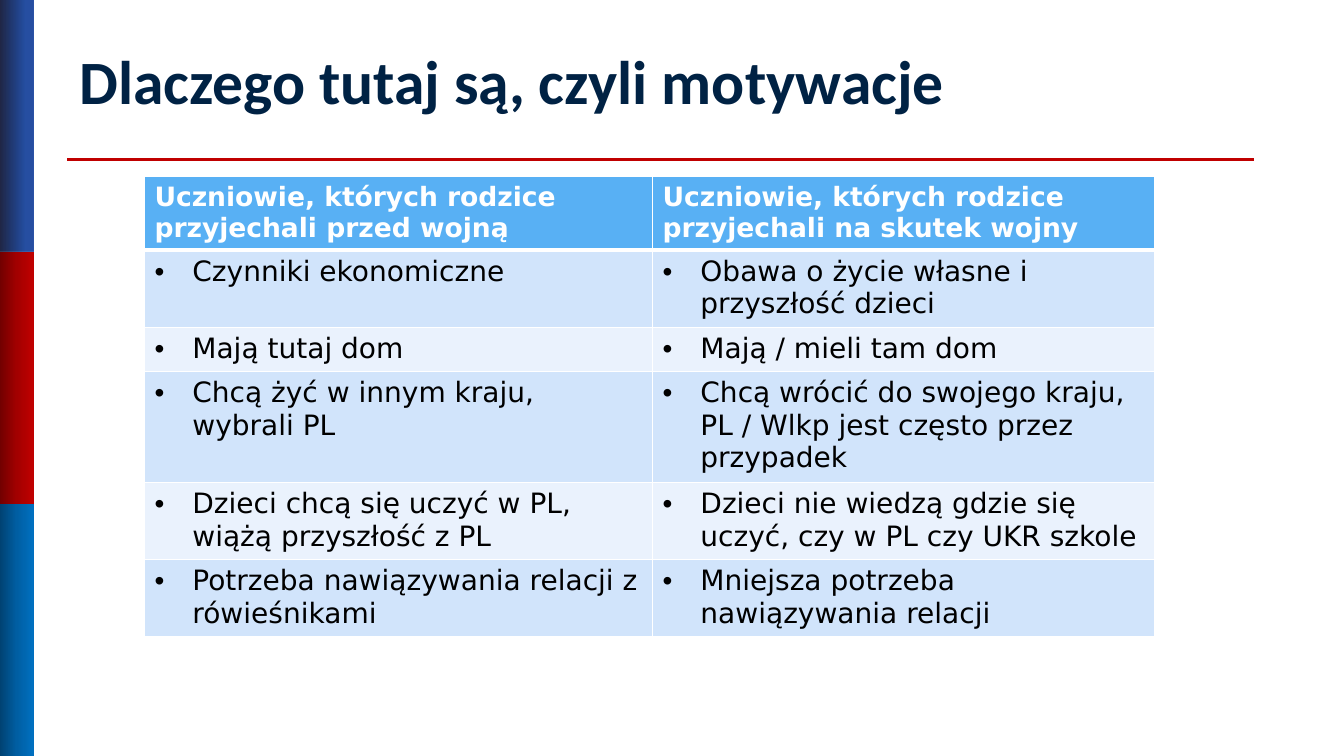
from lxml.etree import SubElement
from pptx import Presentation
from pptx.dml.color import RGBColor
from pptx.enum.shapes import MSO_CONNECTOR, MSO_SHAPE
from pptx.enum.text import MSO_ANCHOR
from pptx.oxml.ns import qn
from pptx.util import Pt

# Content
TITLE = "Dlaczego tutaj są, czyli motywacje"
ROWS = [
    ("Uczniowie, których rodzice przyjechali przed wojną",
     "Uczniowie, których rodzice przyjechali na skutek wojny"),
    ("Czynniki ekonomiczne", "Obawa o życie własne i przyszłość dzieci"),
    ("Mają tutaj dom", "Mają / mieli tam dom"),
    ("Chcą żyć w innym kraju, wybrali PL",
     "Chcą wrócić do swojego kraju, PL / Wlkp jest często przez przypadek"),
    ("Dzieci chcą się uczyć w PL, wiążą przyszłość z PL",
     "Dzieci nie wiedzą gdzie się uczyć, czy w PL czy UKR szkole"),
    ("Potrzeba nawiązywania relacji z rówieśnikami",
     "Mniejsza potrzeba nawiązywania relacji"),
]

# Side bands: stops as (percent, colour, opacity percent)
BANDS = [
    [(0, "212745", 100), (74, "003192", 85)],
    [(0, "720000", 100), (50, "A20000", 100), (100, "C00000", 100)],
    [(0, "004272", 100), (50, "005EA2", 100), (100, "0070C0", 100)],
]

THEME = {
    "title": ("Calibri", 44, "002244", True),
    "head": ("DejaVu Sans", 19, "FFFFFF", True),
    "body": ("DejaVu Sans", 20, "000000", False),
    "top": "58B0F4",
    "odd": "D1E4FB",
    "even": "EAF2FD",
    "edge": "FFFFFF",
    "rule": "C00000",
}

WIDE, HIGH = 960, 540
BAND = 24
COLS = (362.9, 358.6)
ROW = 29.2


def style(para, role):
    name, size, tint, bold = THEME[role]
    for run in para.runs:
        font = run.font
        font.name, font.size, font.bold = name, Pt(size), bold
        font.color.rgb = RGBColor.from_string(tint)


def blend(shape, stops):
    shape.fill.gradient()
    shape.fill.gradient_angle = 0
    group = shape.fill._xPr.find(".//" + qn("a:gsLst"))
    group.clear()
    for spot, tint, alpha in stops:
        stop = SubElement(group, qn("a:gs"), pos=str(spot * 1000))
        color = SubElement(stop, qn("a:srgbClr"), val=tint)
        if alpha < 100:
            SubElement(color, qn("a:alpha"), val=str(alpha * 1000))


def border(cell, sides):
    props = cell._tc.get_or_add_tcPr()
    for side, width in sides.items():
        line = SubElement(props, qn("a:ln" + side), w=str(Pt(width)))
        fill = SubElement(line, qn("a:solidFill"))
        SubElement(fill, qn("a:srgbClr"), val=THEME["edge"])


def bullet(para):
    props = para._p.get_or_add_pPr()
    props.set("marL", str(Pt(27)))
    props.set("indent", str(Pt(-27)))
    SubElement(props, qn("a:buFont"), typeface="Arial")
    SubElement(props, qn("a:buChar"), char="•")


def main():
    deck = Presentation()
    deck.slide_width, deck.slide_height = Pt(WIDE), Pt(HIGH)
    slide = deck.slides.add_slide(deck.slide_layouts[6])
    shapes = slide.shapes

    # Side bands
    step = HIGH / len(BANDS)
    for i, stops in enumerate(BANDS):
        band = shapes.add_shape(MSO_SHAPE.RECTANGLE, 0, Pt(i * step),
                                Pt(BAND), Pt(step))
        band.shadow.inherit = False
        band.line.fill.background()
        blend(band, stops)

    # Rule under the title
    rule = shapes.add_connector(MSO_CONNECTOR.STRAIGHT, Pt(48), Pt(113.75),
                                Pt(895.7), Pt(113.75))
    rule.line.color.rgb = RGBColor.from_string(THEME["rule"])
    rule.line.width = Pt(2)
    SubElement(rule._element.spPr, qn("a:effectLst"))

    # Title
    box = shapes.add_textbox(Pt(48), Pt(10.8), Pt(864), Pt(92.9))
    frame = box.text_frame
    frame.word_wrap = True
    frame.vertical_anchor = MSO_ANCHOR.MIDDLE
    frame.margin_left = frame.margin_right = Pt(8.64)
    frame.margin_top = frame.margin_bottom = Pt(4.32)
    frame.text = TITLE
    style(frame.paragraphs[0], "title")

    # Table of motives
    grid = shapes.add_table(len(ROWS), len(COLS), Pt(103.2), Pt(126),
                            Pt(sum(COLS)), Pt(ROW * len(ROWS))).table
    for col, width in zip(grid.columns, COLS):
        col.width = Pt(width)
    for r, texts in enumerate(ROWS):
        grid.rows[r].height = Pt(ROW)
        shade = "top" if r == 0 else "odd" if r % 2 else "even"
        for c, text in enumerate(texts):
            cell = grid.cell(r, c)
            border(cell, {"L": 1, "R": 1, "T": 3 if r == 1 else 1,
                          "B": 3 if r == 0 else 1})
            cell.fill.solid()
            cell.fill.fore_color.rgb = RGBColor.from_string(THEME[shade])
            cell.text_frame.text = text
            para = cell.text_frame.paragraphs[0]
            if r:
                bullet(para)
            style(para, "body" if r else "head")

    deck.save("out.pptx")


if __name__ == "__main__":
    main()
